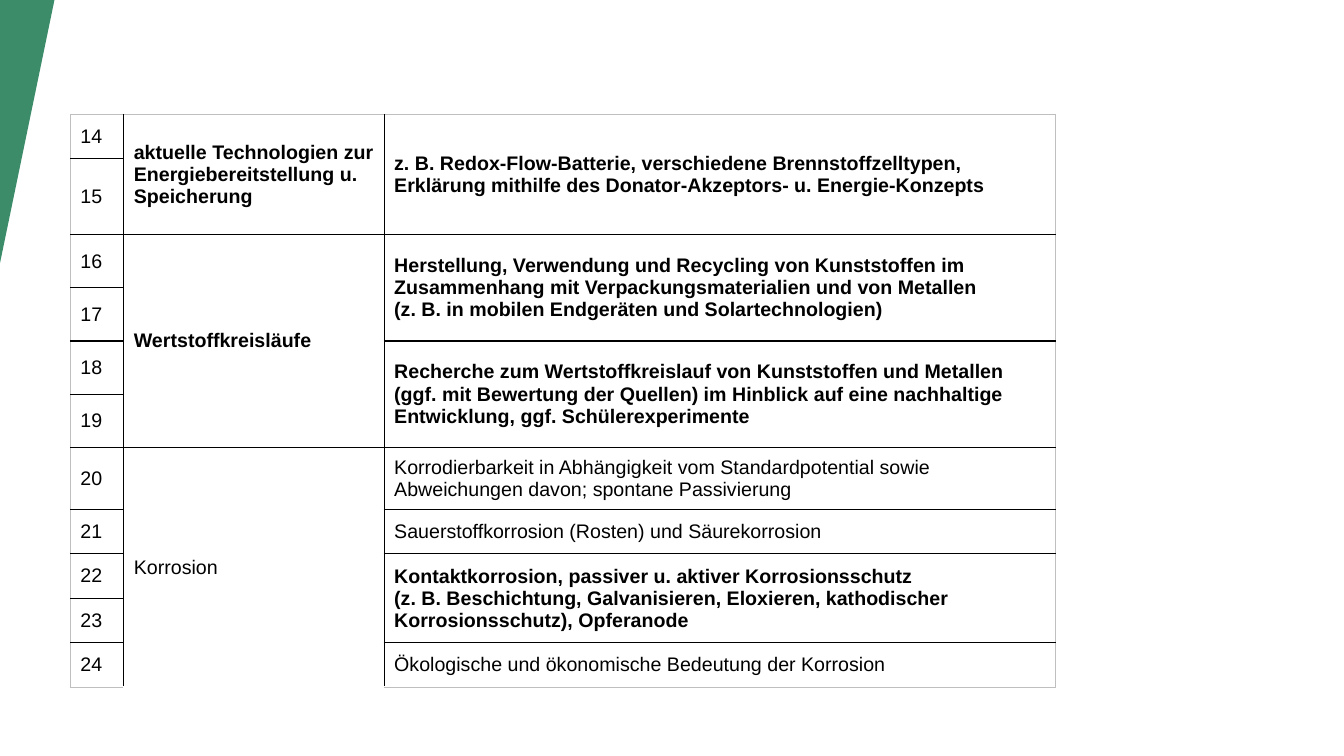
from lxml.etree import SubElement
from pptx import Presentation
from pptx.dml.color import RGBColor
from pptx.enum.shapes import MSO_SHAPE
from pptx.enum.text import MSO_ANCHOR
from pptx.oxml.ns import qn
from pptx.util import Pt

GREEN = RGBColor(0x1A, 0x79, 0x50)
BLACK = RGBColor(0, 0, 0)
GREY = RGBColor(0xBF, 0xBF, 0xBF)

FIRST = 14
WIDTHS = [38.2, 186, 479.5]
HEIGHTS = [31.7, 54.2] + [38] * 4 + [44.4] + [31.7] * 4
TOPICS = [
    (2, True, ["aktuelle Technologien zur Energiebereitstellung u. Speicherung"]),
    (4, True, ["Wertstoffkreisläufe"]),
    (5, False, ["Korrosion"]),
]
DETAILS = [
    (2, True, ["z. B. Redox-Flow-Batterie, verschiedene Brennstoffzelltypen,",
               "Erklärung mithilfe des Donator-Akzeptors- u. Energie-Konzepts"]),
    (2, True, ["Herstellung, Verwendung und Recycling von Kunststoffen im "
               "Zusammenhang mit Verpackungsmaterialien und von Metallen",
               "(z. B. in mobilen Endgeräten und Solartechnologien)"]),
    (2, True, ["Recherche zum Wertstoffkreislauf von Kunststoffen und Metallen "
               "(ggf. mit Bewertung der Quellen) im Hinblick auf eine nachhaltige "
               "Entwicklung, ggf. Schülerexperimente"]),
    (1, False, ["Korrodierbarkeit in Abhängigkeit vom Standardpotential sowie "
                "Abweichungen davon; spontane Passivierung"]),
    (1, False, ["Sauerstoffkorrosion (Rosten) und Säurekorrosion"]),
    (2, True, ["Kontaktkorrosion, passiver u. aktiver Korrosionsschutz",
               "(z. B. Beschichtung, Galvanisieren, Eloxieren, kathodischer "
               "Korrosionsschutz), Opferanode"]),
    (1, False, ["Ökologische und ökonomische Bedeutung der Korrosion"]),
]
LESSONS = [(1, False, [str(FIRST + i)]) for i in range(len(HEIGHTS))]


def write(cell, lines, size=14, bold=False, color=BLACK, face="Arial"):
    cell.vertical_anchor = MSO_ANCHOR.MIDDLE
    frame = cell.text_frame
    frame.text = "\n".join(lines)
    for para in frame.paragraphs:
        for run in para.runs:
            font = run.font
            font.name, font.size, font.bold = face, Pt(size), bold
            font.color.rgb = color


def edge(cell, sides):
    props = cell._tc.get_or_add_tcPr()
    for side, outer in sides:
        width = Pt(0.5 if outer else 1)
        line = SubElement(props, qn("a:ln" + side), w=str(width))
        fill = SubElement(line, qn("a:solidFill"))
        SubElement(fill, qn("a:srgbClr"), val=str(GREY if outer else BLACK))
    cell.fill.background()


def block(table, col, top, count, lines, bold):
    last = len(HEIGHTS) - 1
    end = top + count - 1
    for row in range(top, end + 1):
        sides = [("L", col == 0), ("R", col == len(WIDTHS) - 1)]
        if row == top:
            sides.append(("T", row == 0))
        if row == end:
            sides.append(("B", row == last))
        edge(table.cell(row, col), sides)
    cell = table.cell(top, col)
    if count > 1:
        cell.merge(table.cell(end, col))
    write(cell, lines, bold=bold)


def main():
    deck = Presentation()
    deck.slide_width, deck.slide_height = Pt(960), Pt(540)
    slide = deck.slides.add_slide(deck.slide_layouts[6])

    wedge = slide.shapes.add_shape(MSO_SHAPE.ISOSCELES_TRIANGLE, 0, 0, Pt(38.9), Pt(187.9))
    wedge.adjustments[0] = 1
    wedge.rotation = 180
    wedge.shadow.inherit = False
    wedge.line.fill.background()
    wedge.fill.solid()
    wedge.fill.fore_color.rgb = GREEN
    tint = wedge.fill._xPr.find(".//" + qn("a:srgbClr"))
    SubElement(tint, qn("a:alpha"), val="85000")

    table = slide.shapes.add_table(
        len(HEIGHTS), len(WIDTHS), Pt(50.2), Pt(81.5),
        Pt(sum(WIDTHS)), Pt(sum(HEIGHTS))).table
    table.first_row = table.horz_banding = False
    for col, width in zip(table.columns, WIDTHS):
        col.width = Pt(width)
    for row, height in zip(table.rows, HEIGHTS):
        row.height = Pt(height)

    for col, parts in enumerate([LESSONS, TOPICS, DETAILS]):
        top = 0
        for count, bold, lines in parts:
            block(table, col, top, count, lines, bold)
            top += count

    deck.save("out.pptx")


if __name__ == "__main__":
    main()
